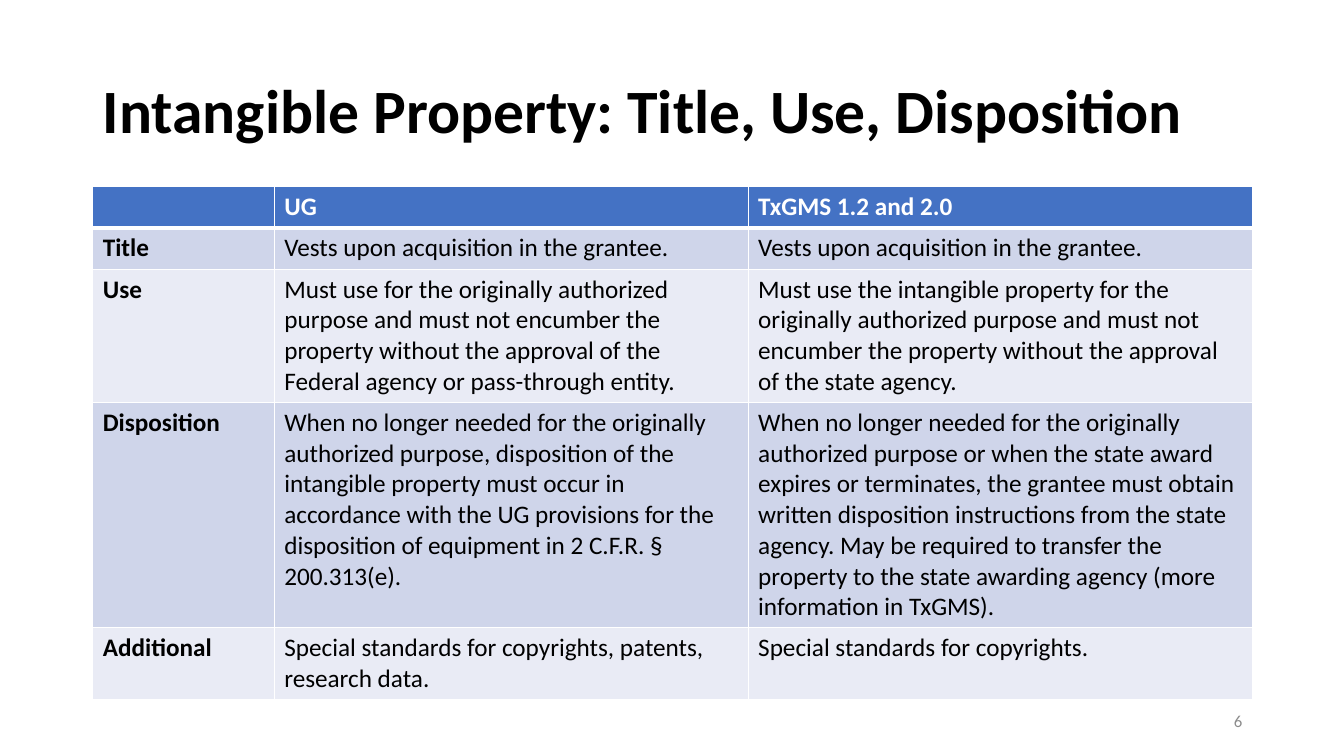
from dataclasses import dataclass

from lxml import etree
from pptx import Presentation
from pptx import util as u
from pptx.dml import color
from pptx.enum import text
from pptx.oxml import ns


@dataclass(frozen=True)
class Theme:
    font: str = "Calibri"
    title_size: int = 44
    body_size: int = 18
    number_size: int = 12
    black: str = "000000"
    white: str = "FFFFFF"
    grey: str = "8C8C8C"
    header: str = "4472C4"
    bands: tuple = ("CFD5EA", "E9EBF5")
    thin: int = 1
    thick: int = 3


class SlideBuilder:
    margin = u.Inches(0.92)
    column = u.Inches(0.1)
    row = u.Inches(0.05)

    def __init__(self, slide, theme):
        self.slide = slide
        self.theme = theme

    def box(self, column, row, columns, rows):
        return (self.margin + column * self.column, row * self.row,
                columns * self.column, rows * self.row)

    def style(self, paragraph, size, rgb, bold=False, align=text.PP_ALIGN.LEFT):
        paragraph.alignment = align
        font = paragraph.font
        font.name = self.theme.font
        font.size = u.Pt(size)
        font.bold = bold
        font.color.rgb = color.RGBColor.from_string(rgb)

    def title(self, wording, *place):
        shape = self.slide.shapes.title
        shape.left, shape.top, shape.width, shape.height = self.box(*place)
        frame = shape.text_frame
        frame.text = wording
        frame.word_wrap = True
        frame.auto_size = text.MSO_AUTO_SIZE.NONE
        frame.vertical_anchor = text.MSO_ANCHOR.MIDDLE
        paragraph = frame.paragraphs[0]
        paragraph.line_spacing = 0.9
        self.style(paragraph, self.theme.title_size, self.theme.black, bold=True)

    def label(self, wording, *place):
        frame = self.slide.shapes.add_textbox(*self.box(*place)).text_frame
        frame.text = wording
        frame.word_wrap = True
        frame.vertical_anchor = text.MSO_ANCHOR.MIDDLE
        self.style(frame.paragraphs[0], self.theme.number_size, self.theme.grey,
                   align=text.PP_ALIGN.RIGHT)

    def borders(self, cell, top, bottom):
        properties = cell._tc.get_or_add_tcPr()
        widths = {"L": self.theme.thin, "R": self.theme.thin, "T": top, "B": bottom}
        for side, width in widths.items():
            line = etree.SubElement(properties, ns.qn(f"a:ln{side}"), w=str(u.Pt(width)))
            fill = etree.SubElement(line, ns.qn("a:solidFill"))
            etree.SubElement(fill, ns.qn("a:srgbClr"), val=self.theme.white)

    def table(self, records, widths, row_height, *place):
        theme = self.theme
        shape = self.slide.shapes.add_table(len(records), len(widths), *self.box(*place))
        table = shape.table
        for column, width in zip(table.columns, widths):
            column.width = width * self.column
        for row in table.rows:
            row.height = u.Inches(row_height)
        shape.height = self.box(*place)[3]
        for i, record in enumerate(records):
            header = i == 0
            fill = theme.header if header else theme.bands[(i - 1) % 2]
            for j, wording in enumerate(record):
                cell = table.cell(i, j)
                cell.text = wording
                self.borders(cell, theme.thick if i == 1 else theme.thin,
                             theme.thick if header else theme.thin)
                cell.fill.solid()
                cell.fill.fore_color.rgb = color.RGBColor.from_string(fill)
                self.style(cell.text_frame.paragraphs[0], theme.body_size,
                           theme.white if header else theme.black,
                           bold=header or j == 0)


RULES = [
    ("", "UG", "TxGMS 1.2 and 2.0"),
    ("Title", "Vests upon acquisition in the grantee.",
     "Vests upon acquisition in the grantee."),
    ("Use",
     "Must use for the originally authorized purpose and must not encumber the "
     "property without the approval of the Federal agency or pass-through entity.",
     "Must use the intangible property for the originally authorized purpose and "
     "must not encumber the property without the approval of the state agency."),
    ("Disposition",
     "When no longer needed for the originally authorized purpose, disposition of "
     "the intangible property must occur in accordance with the UG provisions for "
     "the disposition of equipment in 2 C.F.R. § 200.313(e).",
     "When no longer needed for the originally authorized purpose or when the state "
     "award expires or terminates, the grantee must obtain written disposition "
     "instructions from the state agency. May be required to transfer the property "
     "to the state awarding agency (more information in TxGMS)."),
    ("Additional", "Special standards for copyrights, patents, research data.",
     "Special standards for copyrights."),
]


def main():
    presentation = Presentation()
    presentation.slide_width = u.Inches(13.33)
    presentation.slide_height = u.Inches(7.5)
    title_only = presentation.slide_layouts.get_by_name("Title Only")
    builder = SlideBuilder(presentation.slides.add_slide(title_only), Theme())
    builder.title("Intangible Property: Title, Use, Disposition", 0, 8, 115, 29)
    builder.table(RULES, (18, 47, 50), 0.41, 0, 37, 115, 100)
    builder.label("6", 85, 139, 30, 8)
    presentation.save("out.pptx")


if __name__ == "__main__":
    main()
